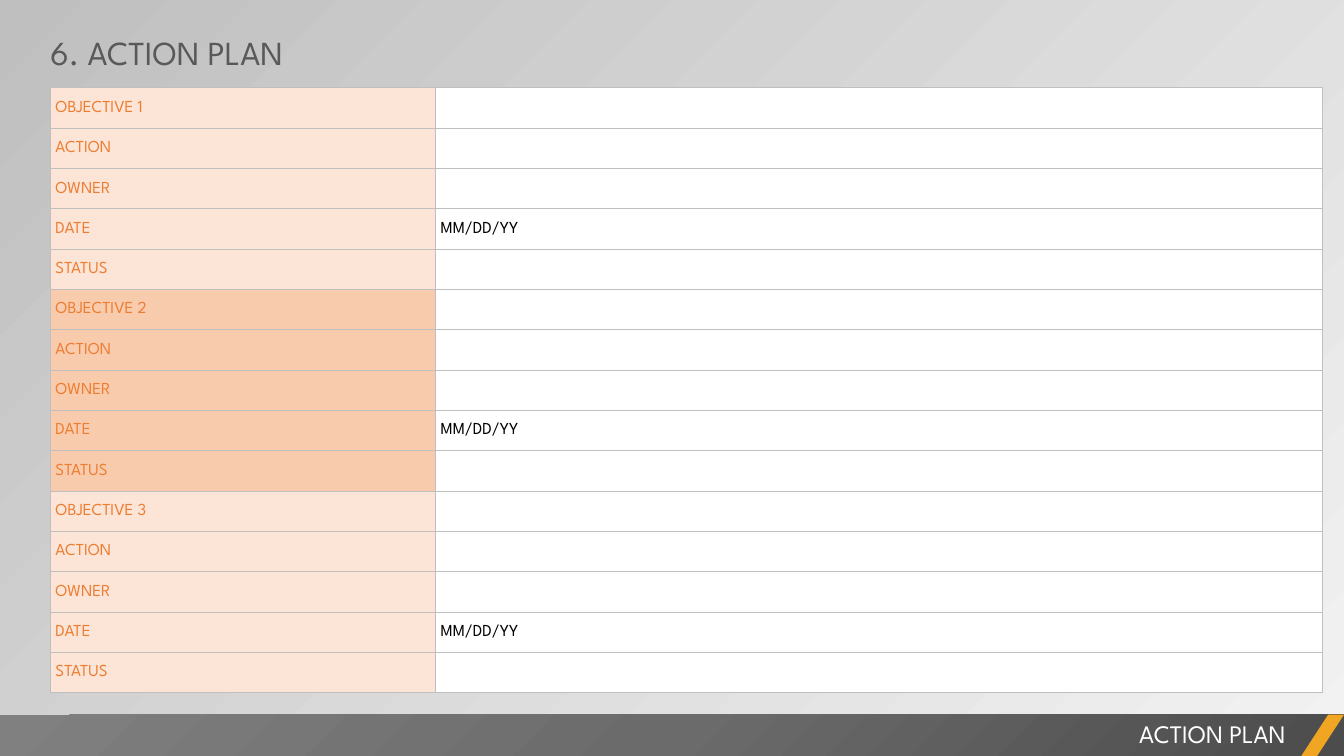
from lxml import etree
from pptx import Presentation
from pptx.dml.color import RGBColor
from pptx.enum.shapes import MSO_SHAPE
from pptx.enum.text import MSO_ANCHOR, MSO_AUTO_SIZE, PP_ALIGN
from pptx.oxml.ns import qn
from pptx.util import Inches, Pt

RECTANGLE, SLASH = MSO_SHAPE.RECTANGLE, MSO_SHAPE.PARALLELOGRAM
TOP, MIDDLE = MSO_ANCHOR.TOP, MSO_ANCHOR.MIDDLE
LEFT, RIGHT = PP_ALIGN.LEFT, PP_ALIGN.RIGHT
GROW = MSO_AUTO_SIZE.SHAPE_TO_FIT_TEXT

FONT = "League Spartan"
COLORS = {
    "white": "FFFFFF", "black": "000000", "title": "595959",
    "label": "ED7D31", "light": "FCE4D6", "dark": "F8CBAD",
    "border": "BFBFBF", "accent": "F0A622",
    "bg_light": "F2F2F2", "bg_dark": "BFBFBF",
    "band_dark": "4C4C4C", "band_mid": "6B6B6B", "band_light": "808080",
}
FIELDS = ["ACTION", "OWNER", "DATE", "STATUS"]
SHADES = ["light", "dark", "light"]  # one per objective
COL_WIDTHS = [3.82, 8.8]
ROW_HEIGHT = 0.4


def rgb(name):
    return RGBColor.from_string(COLORS[name])


def add_xml(parent, tag, **attrs):
    el = etree.SubElement(parent, qn(tag))
    for key, value in attrs.items():
        el.set(key, str(value))
    return el


def paint_gradient(fill, owner, stops, angle=None):
    """Linear gradient at an angle, or circular from the lower right corner."""
    fill.gradient()
    grad = owner.find(".//" + qn("a:gradFill"))
    for child in list(grad):
        grad.remove(child)
    gs_list = add_xml(grad, "a:gsLst")
    for pos, color, alpha in stops:
        gs = add_xml(gs_list, "a:gs", pos=pos * 1000)
        clr = add_xml(gs, "a:srgbClr", val=COLORS[color])
        if alpha < 100:
            add_xml(clr, "a:alpha", val=alpha * 1000)
    if angle is None:
        circle = add_xml(grad, "a:path", path="circle")
        add_xml(circle, "a:fillToRect", l=100000, t=100000)
    else:
        add_xml(grad, "a:lin", ang=angle * 60000, scaled=0)


def add_plain_shape(slide, kind, *box):
    sp = slide.shapes.add_shape(kind, *map(Inches, box))
    sp.shadow.inherit = False
    sp.line.fill.background()
    return sp


def write(tf, text, size, color, align=LEFT):
    tf.text = text
    p = tf.paragraphs[0]
    p.alignment = align
    for r in p.runs:
        r.font.name = FONT
        r.font.size = Pt(size)
        r.font.color.rgb = rgb(color)


def place_heading(sp, box, text, size, color, align, wrap):
    sp.left, sp.top, sp.width, sp.height = map(Inches, box)
    tf = sp.text_frame
    tf.word_wrap = wrap
    tf.auto_size = GROW
    tf.vertical_anchor = TOP
    write(tf, text, size, color, align)


def style_cell(cell, text, color, fill):
    cell.margin_left, cell.margin_right = Inches(0.05), Inches(0.01)
    cell.margin_top, cell.margin_bottom = Inches(0.01), 0
    cell.vertical_anchor = MIDDLE
    tc_pr = cell._tc.get_or_add_tcPr()
    for side in ("L", "R", "T", "B"):
        ln = add_xml(tc_pr, "a:ln" + side, w=Pt(0.5))
        add_xml(add_xml(ln, "a:solidFill"), "a:srgbClr", val=COLORS["border"])
    cell.fill.solid()
    cell.fill.fore_color.rgb = rgb(fill)
    write(cell.text_frame, text, 12, color)


def add_plan_table(slide):
    rows = [(label, shade)
            for number, shade in enumerate(SHADES, 1)
            for label in [f"OBJECTIVE {number}"] + FIELDS]
    frame = slide.shapes.add_table(
        len(rows), len(COL_WIDTHS), Inches(0.5), Inches(0.87),
        Inches(sum(COL_WIDTHS)), Inches(ROW_HEIGHT * len(rows)))
    table = frame.table
    table.first_row = table.horz_banding = False
    for column, width in zip(table.columns, COL_WIDTHS):
        column.width = Inches(width)
    for i, (label, shade) in enumerate(rows):
        table.rows[i].height = Inches(ROW_HEIGHT)
        style_cell(table.cell(i, 0), label, "label", shade)
        entry = "MM/DD/YY" if label == "DATE" else ""
        style_cell(table.cell(i, 1), entry, "black", "white")


def add_footer(slide):
    band = add_plain_shape(slide, RECTANGLE, 0, 7.09, 13.33, 0.42)
    paint_gradient(band.fill, band._element, [
        (0, "band_dark", 100), (50, "band_mid", 100), (100, "band_light", 100)])

    slash = add_plain_shape(slide, SLASH, 12.9, 7.09, 0.43, 0.42)
    slash.adjustments[0] = 0.65
    slash.fill.solid()
    slash.fill.fore_color.rgb = rgb("accent")

    caption = slide.shapes.add_textbox(0, 0, 0, 0)
    place_heading(caption, (5.25, 7.08, 7.6, 0.4), "ACTION PLAN", 18,
                  "white", RIGHT, True)


def main():
    prs = Presentation()
    prs.slide_width, prs.slide_height = Inches(13.33), Inches(7.5)
    slide = prs.slides.add_slide(prs.slide_layouts[5])

    # Background
    paint_gradient(slide.background.fill, slide._element,
                   [(0, "bg_light", 40), (100, "bg_dark", 100)], angle=225)

    # Footer band, title and plan
    add_footer(slide)
    place_heading(slide.shapes.title, (0.4, 0.27, 2.8, 0.5), "6. ACTION PLAN",
                  24, "title", LEFT, False)
    add_plan_table(slide)

    prs.save("out.pptx")


if __name__ == "__main__":
    main()
